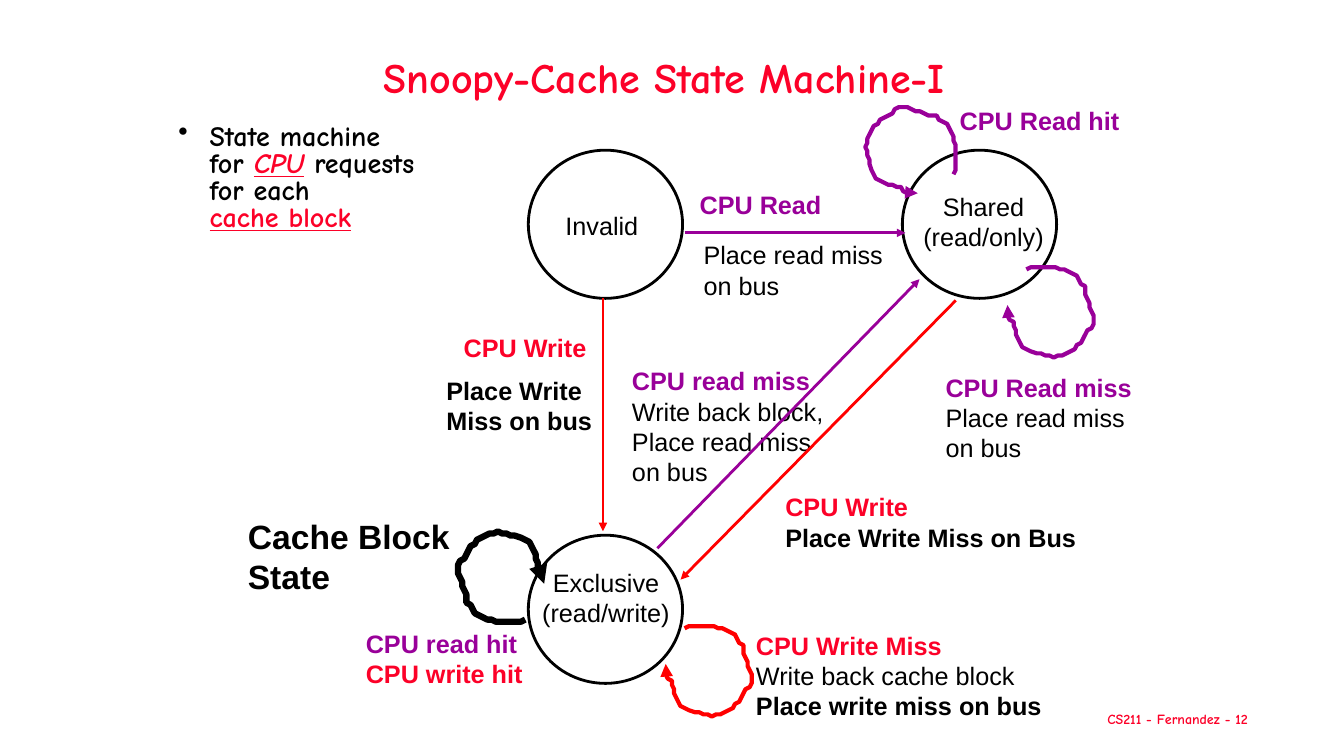
from dataclasses import dataclass

from lxml import etree
from pptx import Presentation
from pptx.dml.color import RGBColor
from pptx.enum.shapes import MSO_CONNECTOR, MSO_SHAPE
from pptx.enum.text import MSO_ANCHOR, MSO_AUTO_SIZE, PP_ALIGN
from pptx.oxml.ns import qn
from pptx.util import Inches, Pt

STRAIGHT = MSO_CONNECTOR.STRAIGHT
OVAL = MSO_SHAPE.OVAL
TOP, MIDDLE = MSO_ANCHOR.TOP, MSO_ANCHOR.MIDDLE
FIT, FIXED = MSO_AUTO_SIZE.SHAPE_TO_FIT_TEXT, MSO_AUTO_SIZE.NONE
LEFT, CENTER = PP_ALIGN.LEFT, PP_ALIGN.CENTER

CELL = Inches(0.1)  # side of one grid square
STEP = CELL / 4.8  # fine step used by the hand-drawn loop


@dataclass(frozen=True)
class Theme:
    ink = RGBColor(0, 0, 0)
    paper = RGBColor(255, 255, 255)
    accent = RGBColor(0xFC, 0x01, 0x28)
    red = RGBColor(255, 0, 0)
    purple = RGBColor(0x99, 0, 0x99)
    display = "Comic Neue"
    plain = "Arial"
    title, heading, body, label, footer = 30, 24, 20, 18, 10
    line, loop, heavy = 2, 3, 4.5


THEME = Theme()


@dataclass(frozen=True)
class Box:
    """A region in columns and rows of the grid."""
    col: float
    row: float
    cols: float
    rows: float

    def inside(self, col, row, cols=0, rows=0):
        return Box(self.col + col, self.row + row, cols, rows)

    def emu(self):
        return [round(n * CELL) for n in (self.col, self.row, self.cols, self.rows)]


# Loop outline in fine steps, on a 41 by 43 field
LOOP_SIZE = (41, 43)
LOOP = [
    (9, 1), (11, 0), (23, 0), (25, 1), (27, 1), (29, 2), (31, 3), (33, 4),
    (34, 6), (35, 8), (37, 9), (37, 13), (38, 15), (39, 17), (39, 19),
    (40, 21), (41, 23), (41, 27), (40, 29), (38, 30), (37, 32), (36, 34),
    (35, 36), (33, 37), (32, 39), (30, 40), (28, 41), (26, 42), (24, 42),
    (22, 43), (20, 42), (18, 42), (16, 41), (14, 41), (11, 40), (9, 39),
    (7, 38), (6, 36), (5, 34), (4, 32), (4, 30), (3, 28), (3, 26), (1, 25),
    (0, 23), (0, 18),
]


def upright(x, y):
    return x, y


def half_turn(x, y):
    return -x, -y


def transposed(x, y):
    return -y, -x


def set_font(font, size, color, bold=False, name=THEME.plain):
    font.name, font.size, font.bold = name, Pt(size), bold
    font.color.rgb = color


def style_line(shape, color, width, arrow=None):
    shape.line.color.rgb = color
    shape.line.width = Pt(width)
    if arrow:
        outline = shape._element.spPr.find(qn("a:ln"))
        etree.SubElement(outline, qn(f"a:{arrow}"), type="triangle")


def add_label(page, box, lines, size=THEME.label, align=LEFT, wrap=False,
              fill=True, name=THEME.plain):
    """Each line is (text, color, bold)."""
    label = page.shapes.add_textbox(*box.emu())
    if fill:
        label.fill.solid()
        label.fill.fore_color.rgb = THEME.paper
    frame = label.text_frame
    frame.word_wrap, frame.auto_size, frame.vertical_anchor = wrap, FIT, TOP
    for index, (text, color, bold) in enumerate(lines):
        para = frame.paragraphs[0] if index == 0 else frame.add_paragraph()
        para.text, para.alignment = text, align
        set_font(para.font, size, color, bold, name)


def add_arrow(page, start, end, color, arrow="tailEnd"):
    ends = start.emu()[:2] + end.emu()[:2]
    connector = page.shapes.add_connector(STRAIGHT, *ends)
    style_line(connector, color, THEME.line, arrow)
    etree.SubElement(connector._element.spPr, qn("a:effectLst"))


def add_loop(page, center, turn, color, width):
    half_width, half_height = (n / 2 for n in LOOP_SIZE)
    points = [tuple(n * STEP for n in turn(x - half_width, y - half_height))
              for x, y in LOOP]
    outline = page.shapes.build_freeform(*points[0])
    outline.add_line_segments(points[1:], close=False)
    loop = outline.convert_to_shape(*center.emu()[:2])
    loop.fill.background()
    loop.shadow.inherit = False
    style_line(loop, color, width, "tailEnd")


def add_title(page, box):
    title = page.shapes.title
    title.left, title.top, title.width, title.height = box.emu()
    frame = title.text_frame
    frame.vertical_anchor, frame.auto_size = MIDDLE, FIXED
    para = frame.paragraphs[0]
    para.text = "Snoopy-Cache State Machine-I "
    para.alignment, para.line_spacing = CENTER, 0.9
    set_font(para.font, THEME.title, THEME.accent, True, THEME.display)


def add_summary(page, box):
    frame = page.shapes.add_textbox(*box.emu()).text_frame
    frame.word_wrap = True
    para = frame.paragraphs[0]
    para.line_spacing = 0.8
    set_font(para.font, THEME.body, THEME.ink, True, THEME.display)
    indent = Inches(0.31)
    props = para._p.get_or_add_pPr()
    props.set("marL", str(indent))
    props.set("indent", str(-indent))
    bullet = etree.Element(qn("a:buChar"), char="•")
    props.find(qn("a:defRPr")).addprevious(bullet)
    spans = [("State machine\vfor ", False, False), ("CPU", True, True),
             (" requests\vfor each \v", False, False), ("cache block", True, False)]
    for text, marked, italic in spans:
        for index, piece in enumerate(text.split("\v")):
            if index:
                para.add_line_break()
            if not piece:
                continue
            span = para.add_run()
            span.text = piece
            set_font(span.font, THEME.body, THEME.accent if marked else THEME.ink,
                     True, THEME.display)
            span.font.underline, span.font.italic = marked, italic


def add_diagram(page, box):
    ink, red, purple = THEME.ink, THEME.accent, THEME.purple
    at = box.inside

    # State names
    add_label(page, at(35.1, 10.4, 9.3, 4), [("Invalid", ink, False)])
    for place, lines in [(at(70.5, 8.5, 14.1, 7), ("Shared", "(read/only)")),
                         (at(32.5, 45.8, 15.2, 7), ("Exclusive", "(read/write)"))]:
        add_label(page, place, [(text, ink, False) for text in lines],
                  align=CENTER, wrap=True)

    # Transition labels
    place_read = [("Place read miss", ink, False), ("on bus", ink, False)]
    labels = [
        (at(48.4, 8.3, 14.2, 4), [("CPU Read", purple, True)]),
        (at(25, 22.5, 14.2, 4), [("CPU Write", red, True)]),
        (at(74.2, 0, 18, 4), [("CPU Read hit", purple, True)]),
        (at(48.8, 13.3, 19.9, 7), place_read),
        (at(23.3, 26.7, 16.6, 7), [("Place Write \vMiss on bus", ink, True)]),
        (at(41.7, 25.8, 21, 13), [("CPU read miss", purple, True),
                                  ("Write back block,", ink, False)] + place_read),
        (at(56.9, 38.3, 30.9, 7), [("CPU Write", red, True),
                                   ("Place Write Miss on Bus", ink, True)]),
        (at(72.8, 26.4, 20.7, 10.1), [("CPU Read miss", purple, True)] + place_read),
        (at(54, 52, 30.6, 10.1), [("CPU Write Miss", red, True),
                                  ("Write back cache block", ink, False),
                                  ("Place write miss on bus", ink, True)]),
        (at(15.3, 51.8, 17.7, 7), [("CPU read hit", purple, True),
                                   ("CPU write hit", red, True)]),
    ]
    for place, lines in labels:
        add_label(page, place, lines)
    add_label(page, at(3.6, 40.7, 22.2, 9.1),
              [("Cache Block", ink, True), ("State", ink, True)],
              size=THEME.heading, fill=False)

    # State circles
    for col, row in [(32.4, 4.9), (69.5, 4.9), (32.4, 43.1)]:
        circle = page.shapes.add_shape(OVAL, *at(col, row, 15.3, 14.7).emu())
        circle.fill.background()
        circle.shadow.inherit = False
        style_line(circle, ink, THEME.line)

    # Arrows between states
    add_arrow(page, at(47.9, 13.1), at(69.8, 13.1), purple)
    add_arrow(page, at(39.8, 19.6), at(39.8, 42.7), THEME.red)
    add_arrow(page, at(45.2, 44.4), at(71.2, 17.7), purple)
    add_arrow(page, at(47.5, 47.5), at(74.8, 19.8), THEME.red, "headEnd")

    # Loops back to the same state
    add_loop(page, at(50.3, 56.6), upright, THEME.red, THEME.loop)
    add_loop(page, at(84.2, 21), upright, purple, THEME.loop)
    add_loop(page, at(70.3, 4.9), transposed, purple, THEME.loop)
    add_loop(page, at(29.7, 47.2), half_turn, ink, THEME.heavy)


def add_footer(page, box):
    add_label(page, box, [("CS211 - Fernandez - 12", THEME.accent, True)],
              size=THEME.footer, align=CENTER, fill=False, name=THEME.display)


def main():
    deck = Presentation()
    deck.slide_width, deck.slide_height = Inches(13.33), Inches(7.5)
    page = deck.slides.add_slide(deck.slide_layouts[5])
    add_footer(page, Box(106.6, 70, 20.4, 2.7))
    add_title(page, Box(27.5, 5, 78.3, 5.8))
    add_summary(page, Box(16.7, 11.9, 39.6, 10.6))
    add_diagram(page, Box(20, 10, 93.5, 62.1))
    deck.save("out.pptx")


if __name__ == "__main__":
    main()
